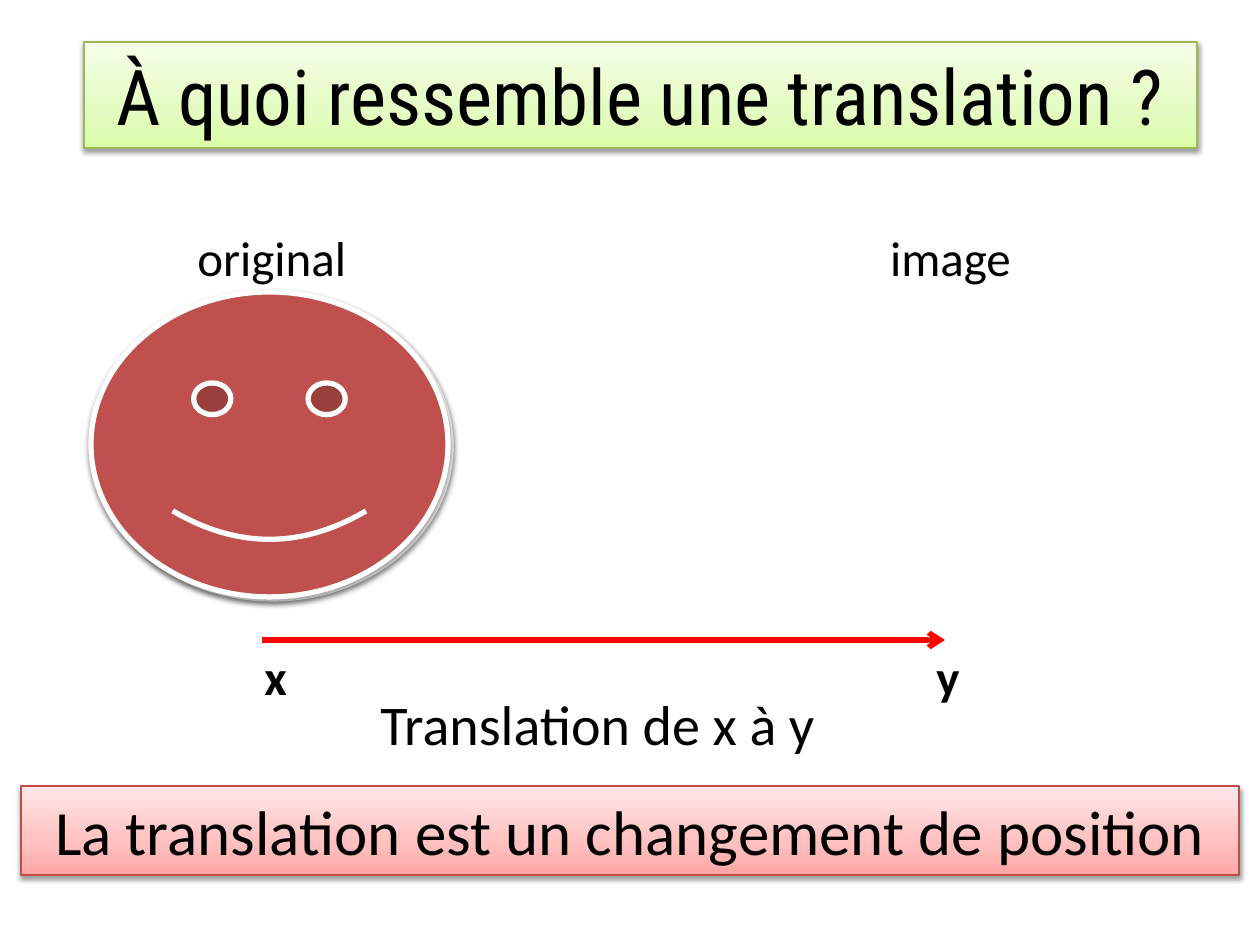
from pptx import Presentation
from pptx import util as u
from pptx.dml import color
from pptx.enum import shapes, text
from pptx.oxml import parse_xml
from pptx.oxml import ns

SCALE = 914400 / 126
COLOURS = {
    "ink": "000000", "white": "FFFFFF", "face": "C0504D", "arrow": "FF0000",
    "green line": "98B955", "red line": "BF4C48",
}
GRADIENTS = {
    "green": ("DAFDA7", "E4FCC2", "F5FFE7"),
    "red": ("FFA6A5", "FFC0BF", "FFE7E7"),
}
STOPS = (0, 35, 100)


def px(*lengths):
    return [u.Emu(round(length * SCALE)) for length in lengths]


def rgb(name):
    return color.RGBColor.from_string(COLOURS[name])


def node(body):
    tag, rest = body.split(" ", 1)
    return parse_xml(f"<a:{tag} {ns.nsdecls('a')} {rest}")


class Page:
    font = "Calibri"

    def __init__(self, deck):
        self.slide = deck.slides.add_slide(deck.slide_layouts[5])

    def set_text(self, box, words, size, font=None, bold=False, align=text.PP_ALIGN.LEFT):
        frame = box.text_frame
        frame.word_wrap = True
        frame.auto_size = text.MSO_AUTO_SIZE.NONE
        frame.text = words
        para = frame.paragraphs[0]
        para.alignment = align
        span = para.runs[0].font
        span.name = font or self.font
        span.size = u.Pt(size)
        span.bold = bold
        span.color.rgb = rgb("ink")

    def outline(self, line, colour, width):
        line.color.rgb = rgb(colour)
        line.width = u.Pt(width)

    def shade(self, box):
        box.shadow.inherit = False
        effects = box._element.spPr.find(ns.qn("a:effectLst"))
        effects.append(node(
            'outerShdw blurRad="40000" dist="20000" dir="5400000" rotWithShape="0">'
            '<a:srgbClr val="000000"><a:alpha val="38000"/></a:srgbClr></a:outerShdw>'))

    def panel(self, box, hue):
        box.fill.gradient()
        box.fill.gradient_angle = 90
        stops = box._element.spPr.find(".//" + ns.qn("a:gsLst"))
        for stop in list(stops):
            stops.remove(stop)
        for place, value in zip(STOPS, GRADIENTS[hue]):
            stops.append(node(f'gs pos="{place * 1000}"><a:srgbClr val="{value}"/></a:gs>'))
        self.outline(box.line, f"{hue} line", 0.75)
        self.shade(box)

    def title(self, words, area, size, font, hue):
        box = self.slide.shapes.title
        box.left, box.top, box.width, box.height = px(*area)
        self.panel(box, hue)
        self.set_text(box, words, size, font, align=text.PP_ALIGN.CENTER)

    def banner(self, words, area, size, hue):
        box = self.slide.shapes.add_shape(shapes.MSO_SHAPE.RECTANGLE, *px(*area))
        self.panel(box, hue)
        self.set_text(box, words, size, align=text.PP_ALIGN.CENTER)

    def face(self, area):
        box = self.slide.shapes.add_shape(shapes.MSO_SHAPE.SMILEY_FACE, *px(*area))
        box.fill.solid()
        box.fill.fore_color.rgb = rgb("face")
        self.outline(box.line, "white", 3)
        self.shade(box)

    def arrow(self, start, end):
        line = self.slide.shapes.add_connector(
            shapes.MSO_CONNECTOR.STRAIGHT, *px(*start, *end))
        self.outline(line.line, "arrow", 3)
        line.line._get_or_add_ln().append(node('tailEnd type="arrow"/>'))
        line._element.spPr.append(node("effectLst />"))

    def label(self, words, area, size, **style):
        self.set_text(self.slide.shapes.add_textbox(*px(*area)), words, size, **style)


def main():
    deck = Presentation()
    deck.slide_width, deck.slide_height = px(1260, 945)
    page = Page(deck)
    page.title("À quoi ressemble une translation ?", (84, 42, 1113, 106), 44,
               "Roboto Condensed", "green")
    for left, top in ((94, 294), (91, 292)):
        page.face((left, top, 357, 305))
    page.banner("La translation est un changement de position", (21, 786, 1218, 89), 36, "red")
    page.arrow((262, 640), (945, 640))
    for letter, left in (("x", 252), ("y", 924)):
        page.label(letter, (left, 640, 42, 72), 28, bold=True)
    page.label("Translation de x à y", (368, 683, 483, 81), 32)
    page.label("original", (185, 221, 179, 72), 28)
    page.label("image", (861, 221, 179, 72), 28, align=text.PP_ALIGN.CENTER)
    deck.save("out.pptx")


if __name__ == "__main__":
    main()
